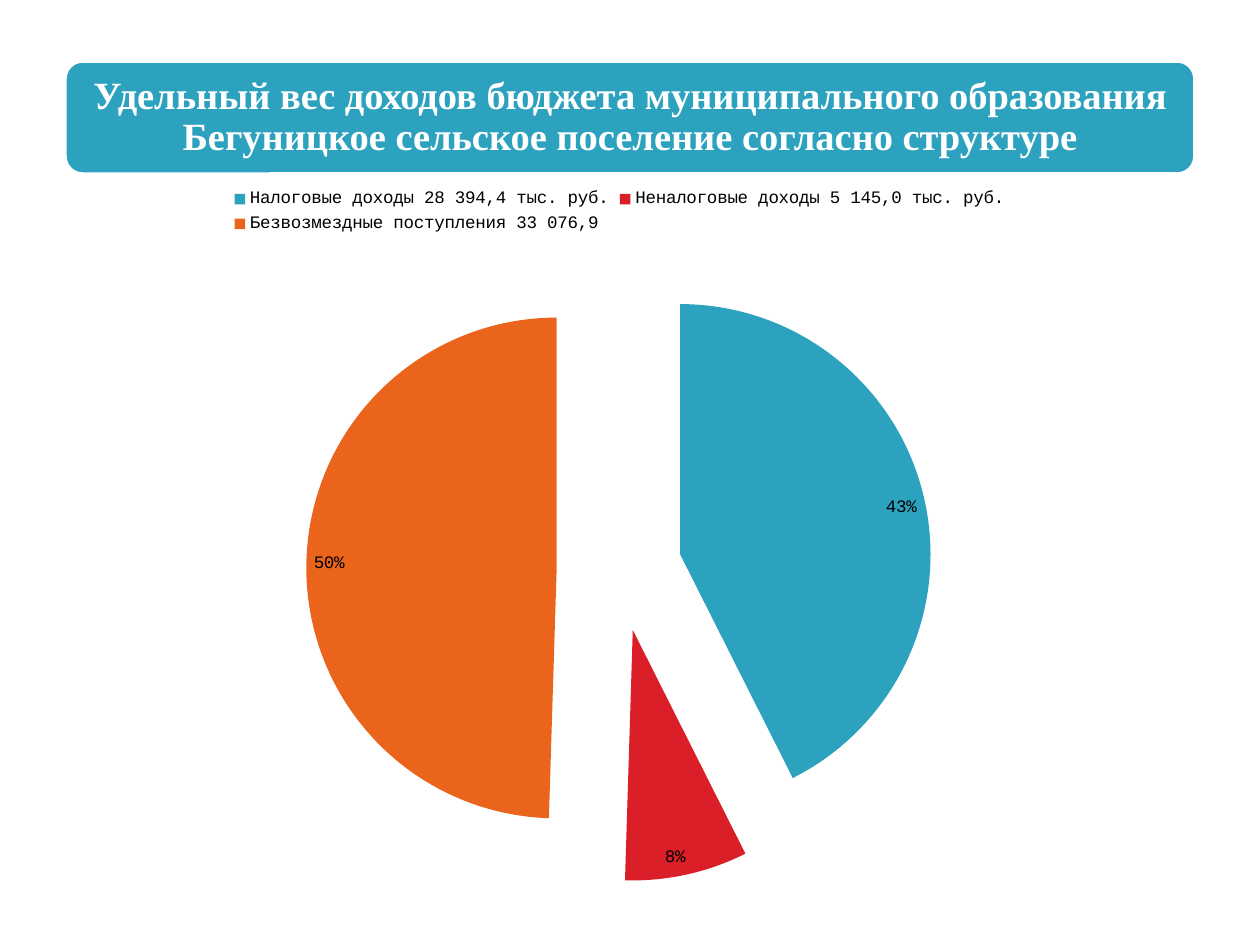
from lxml import etree
from pptx import Presentation
from pptx.chart.data import CategoryChartData
from pptx.dml.color import RGBColor
from pptx.enum.chart import XL_CHART_TYPE as ChartType
from pptx.enum.chart import XL_LABEL_POSITION as LabelPosition
from pptx.enum.chart import XL_LEGEND_POSITION as LegendPosition
from pptx.enum.shapes import MSO_SHAPE as Shape
from pptx.enum.text import MSO_ANCHOR as Anchor
from pptx.enum.text import MSO_AUTO_SIZE as AutoSize
from pptx.enum.text import PP_ALIGN as Align
from pptx.oxml.ns import qn
from pptx.util import Cm, Pt

TEAL = RGBColor(0x2D, 0xA2, 0xBF)
RED = RGBColor(0xDA, 0x1F, 0x28)
ORANGE = RGBColor(0xEB, 0x64, 0x1B)
WHITE = RGBColor(0xFF, 0xFF, 0xFF)
BLACK = RGBColor(0x00, 0x00, 0x00)

INCOME = [
    ("Налоговые доходы 28 394,4 тыс. руб.", 43, TEAL),
    ("Неналоговые доходы 5 145,0 тыс. руб.", 8, RED),
    ("Безвозмездные поступления 33 076,9", 50, ORANGE),
]

prs = Presentation()
prs.slide_width, prs.slide_height = Cm(25.4), Cm(19.05)
slide = prs.slides.add_slide(prs.slide_layouts[5])

# Heading on its banner
heading_area = Cm(1.27), Cm(1.19), Cm(22.86), Cm(2.36)
heading = slide.shapes.title
heading.left, heading.top, heading.width, heading.height = heading_area

banner = slide.shapes.add_shape(Shape.ROUNDED_RECTANGLE, *heading_area)
banner.shadow.inherit = False
banner.fill.solid()
banner.fill.fore_color.rgb = TEAL
banner.line.color.rgb = WHITE
banner.line.width = Pt(4.33)
heading._element.addprevious(banner._element)

frame = heading.text_frame
frame.text = ("Удельный вес доходов бюджета муниципального образования "
              "Бегуницкое сельское поселение согласно структуре")
frame.word_wrap = True
frame.auto_size = AutoSize.NONE
frame.vertical_anchor = Anchor.MIDDLE
frame.margin_left = frame.margin_right = Cm(0.23)
frame.margin_top = frame.margin_bottom = Cm(0.23)
paragraph = frame.paragraphs[0]
paragraph.alignment = Align.CENTER
paragraph.line_spacing = 0.9
font = paragraph.runs[0].font
font.name, font.size, font.bold = "Times New Roman", Pt(22), True
font.color.rgb = WHITE

# Income shares
shares = CategoryChartData()
shares.categories = [label for label, _, _ in INCOME]
shares.add_series("Series 1", [share for _, share, _ in INCOME])
chart = slide.shapes.add_chart(
    ChartType.PIE, Cm(0.89), Cm(3.53), Cm(23.19), Cm(14.6), shares).chart
chart.has_title = False
chart.font.name, chart.font.size = "Courier New", Pt(10)
chart.font.color.rgb = BLACK
chart.has_legend = True
chart.legend.position = LegendPosition.TOP
chart.legend.include_in_layout = False

plot = chart.plots[0]
plot.vary_by_categories = True
income = plot.series[0]
for index, (_, _, color) in enumerate(INCOME):
    sector = income.points[index].format
    sector.fill.solid()
    sector.fill.fore_color.rgb = color
    sector.line.fill.background()

explosion = etree.Element(qn("c:explosion"), val="25")
income._element.find(qn("c:dPt")).addprevious(explosion)

labels = income.data_labels
labels.show_value = False
labels.show_percentage = True
labels.number_format = "0%"
labels.number_format_is_linked = False
labels.position = LabelPosition.INSIDE_END

prs.save("out.pptx")
